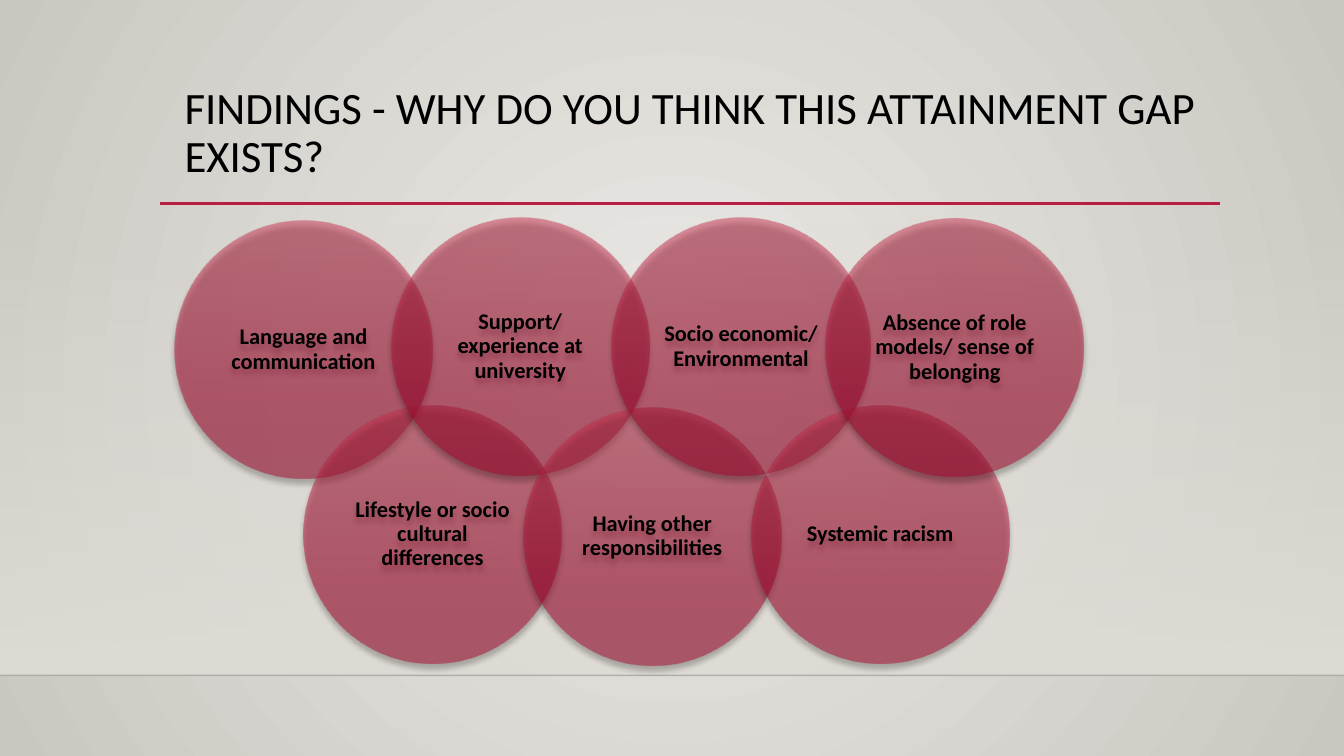
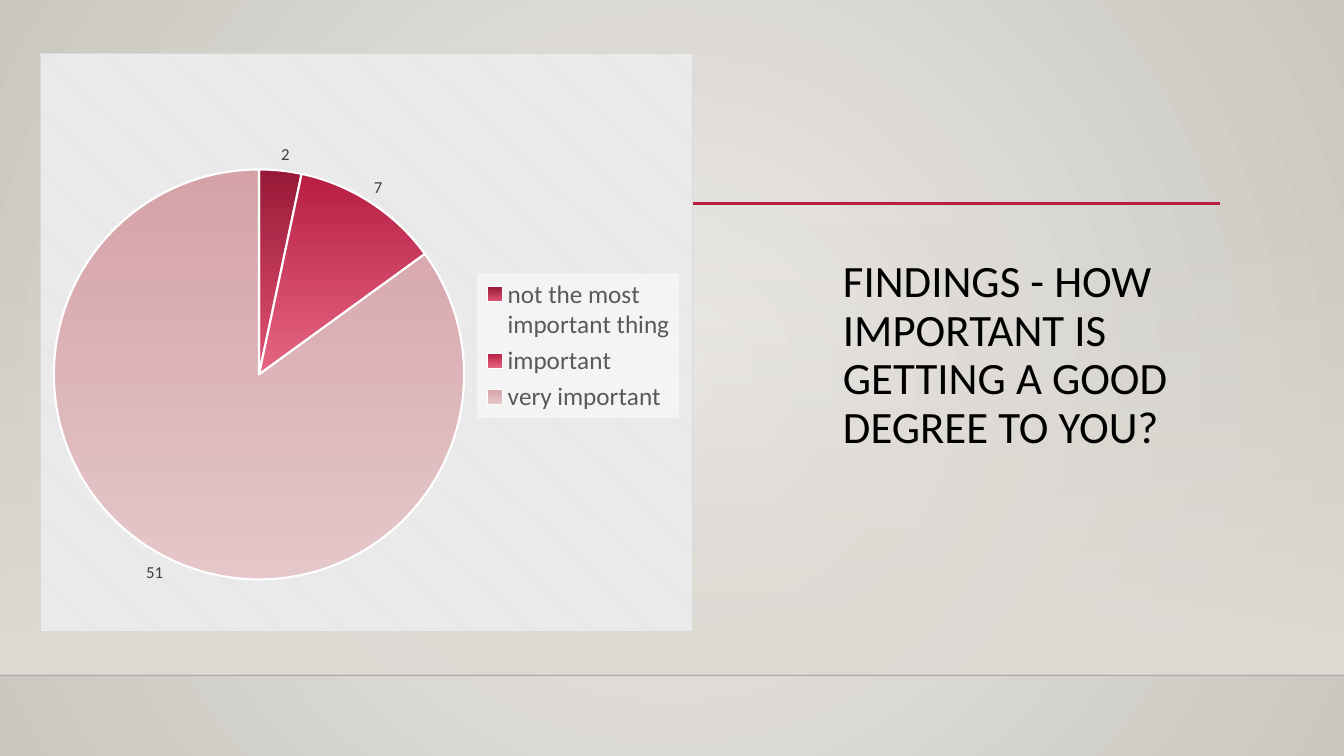
from dataclasses import dataclass

from lxml.etree import SubElement
from pptx import Presentation
from pptx.chart.data import CategoryChartData
from pptx.dml.color import RGBColor
from pptx.enum.chart import XL_CHART_TYPE as ChartType
from pptx.enum.chart import XL_LABEL_POSITION as LabelPosition
from pptx.enum.chart import XL_LEGEND_POSITION as LegendPosition
from pptx.enum.shapes import MSO_CONNECTOR as Connector
from pptx.enum.shapes import MSO_SHAPE as Shape
from pptx.enum.text import MSO_ANCHOR as Anchor
from pptx.enum.text import MSO_AUTO_SIZE as AutoSize
from pptx.enum.text import PP_ALIGN as Align
from pptx.oxml import parse_xml
from pptx.oxml.ns import nsdecls, qn
from pptx.util import Inches, Pt

SLIDE_WIDTH, SLIDE_HEIGHT = Inches(13.33), Inches(7.5)


@dataclass(frozen=True)
class Theme:
    font: str = "Calibri"
    ink: str = "000000"
    accent: str = "B71E42"
    floor_line: str = "000001"
    slice_edge: str = "FFFFFF"
    label_ink: str = "404040"
    legend_ink: str = "595959"
    # Gradient stops: position in percent, colour, opacity in percent
    backdrop: tuple = ((0, "ECEAE7", 100), (100, "CAC7C1", 100))
    band: tuple = ((0, "DFDBD5", 0), (100, "DFDBD5", 100))
    bubble: tuple = ((0, "C7304C", 50), (69, "B3062F", 50), (100, "AA062C", 50))
    slices: tuple = (
        ((0, "981937", 100), (100, "E35375", 100)),
        ((0, "B71E42", 100), (100, "E66684", 100)),
        ((0, "D4A2A7", 100), (100, "E5C7CA", 100)),
    )
    title_size: int = 32
    bubble_size: int = 16
    legend_size: int = 18
    label_size: int = 12
    chart_size: int = 10


THEME = Theme()

BUBBLE_SHARE = 19.2  # diameter, percent of slide width
# Left and top in percent of the slide, then the theme found
FINDINGS = (
    (12.98, 29.2, "Language and communication"),
    (22.58, 53.6, "Lifestyle or socio cultural differences"),
    (29.11, 28.8, "Support/ experience at university"),
    (38.93, 53.87, "Having other responsibilities"),
    (45.54, 28.8, "Socio economic/ Environmental"),
    (55.89, 53.6, "Systemic racism"),
    (61.44, 28.93, "Absence of role models/ sense of belonging"),
)
ANSWERS = {"not the most important thing": 2, "important": 7, "very important": 51}


def across(percent):
    return round(SLIDE_WIDTH * percent / 100)


def down(percent):
    return round(SLIDE_HEIGHT * percent / 100)


def area(left, top, width, height):
    """Turn shares of the slide into a left, top, width, height box."""
    return across(left), down(top), across(width), down(height)


def rgb(colour):
    return RGBColor.from_string(colour)


def style_font(font, size, colour, bold=False):
    font.name = THEME.font
    font.size = Pt(size)
    font.bold = bold
    font.color.rgb = rgb(colour)


def add_alpha(colour_element, opacity):
    SubElement(colour_element, qn("a:alpha")).set("val", str(opacity * 1000))


def paint_gradient(fill, stops, radial=False):
    """Fill from top to bottom, or from the centre outwards if radial."""
    fill.gradient()
    gradient = fill._xPr.find(qn("a:gradFill"))
    stop_list = gradient.find(qn("a:gsLst"))
    for default_stop in list(stop_list):
        stop_list.remove(default_stop)
    for position, colour, opacity in stops:
        stop = SubElement(stop_list, qn("a:gs"))
        stop.set("pos", str(position * 1000))
        colour_element = SubElement(stop, qn("a:srgbClr"))
        colour_element.set("val", colour)
        if opacity < 100:
            add_alpha(colour_element, opacity)
    if radial:
        gradient.replace(gradient.find(qn("a:lin")), parse_xml(
            f'<a:path {nsdecls("a")} path="circle">'
            '<a:fillToRect l="50000" t="50000" r="50000" b="50000"/></a:path>'))
    else:
        fill.gradient_angle = 270


def add_rule(slide, start, end, level, colour, weight, opacity=100):
    rule = slide.shapes.add_connector(
        Connector.STRAIGHT, across(start), down(level), across(end), down(level))
    rule.line.color.rgb = rgb(colour)
    rule.line.width = Pt(weight)
    if opacity < 100:
        add_alpha(next(rule.element.spPr.iter(qn("a:srgbClr"))), opacity)
    SubElement(rule.element.spPr, qn("a:effectLst"))
    return rule


def decorate_layout(layout, slide):
    """Draw the shared scenery on a slide and move it behind the layout's parts."""
    paint_gradient(layout.background.fill, THEME.backdrop, radial=True)
    band = slide.shapes.add_shape(Shape.RECTANGLE, *area(0, 29.47, 100, 59.87))
    band.shadow.inherit = False
    band.line.fill.background()
    paint_gradient(band.fill, THEME.band)
    floor = add_rule(slide, 0, 100, 89.33, THEME.floor_line, 1, opacity=20)
    title_rule = add_rule(slide, 11.93, 90.77, 26.93, THEME.accent, 2.5)
    for index, part in enumerate((band, floor, title_rule)):
        part.element.xpath(".//p:cNvPr")[0].set("id", str(100 + index))
        layout.shapes.element.insert(2 + index, part.element)


def set_title(slide, text, box):
    title = slide.shapes.title
    title.left, title.top, title.width, title.height = box
    frame = title.text_frame
    frame.word_wrap = True
    frame.auto_size = AutoSize.NONE
    frame.vertical_anchor = Anchor.TOP
    paragraph = frame.paragraphs[0]
    paragraph.alignment = Align.LEFT
    paragraph.line_spacing = 0.9
    run = paragraph.add_run()
    run.text = text
    style_font(run.font, THEME.title_size, THEME.ink)


def add_bubble(slide, left, top, text):
    diameter = across(BUBBLE_SHARE)
    bubble = slide.shapes.add_shape(
        Shape.OVAL, across(left), down(top), diameter, diameter)
    bubble.line.fill.background()
    paint_gradient(bubble.fill, THEME.bubble)
    bubble.shadow.inherit = False
    bubble.element.spPr.find(qn("a:effectLst")).append(parse_xml(
        f'<a:outerShdw {nsdecls("a")} blurRad="{Pt(4)}" dist="{Pt(4)}" '
        'dir="5400000" rotWithShape="0"><a:srgbClr val="000000">'
        '<a:alpha val="48000"/></a:srgbClr></a:outerShdw>'))
    frame = bubble.text_frame
    frame.word_wrap = True
    frame.vertical_anchor = Anchor.MIDDLE
    frame.margin_left = frame.margin_right = Inches(0.07)
    frame.margin_top = frame.margin_bottom = Inches(0.07)
    paragraph = frame.paragraphs[0]
    paragraph.alignment = Align.CENTER
    paragraph.line_spacing = 0.9
    run = paragraph.add_run()
    run.text = text
    style_font(run.font, THEME.bubble_size, THEME.ink, bold=True)


def place_in_chart(part, index, x, y, w, h, inner=False):
    """Fix a chart part's place, in shares of the chart, as its child at index."""
    for automatic in part.findall(qn("c:layout")):
        part.remove(automatic)
    target = '<c:layoutTarget val="inner"/>' if inner else ""
    part.insert(index, parse_xml(
        f'<c:layout {nsdecls("c")}><c:manualLayout>{target}'
        '<c:xMode val="edge"/><c:yMode val="edge"/>'
        f'<c:x val="{x}"/><c:y val="{y}"/><c:w val="{w}"/><c:h val="{h}"/>'
        '</c:manualLayout></c:layout>'))


def style_legend(chart):
    chart.has_legend = True
    legend = chart.legend
    legend.position = LegendPosition.RIGHT
    legend.include_in_layout = False
    style_font(legend.font, THEME.legend_size, THEME.legend_ink)
    element = chart.element.find(f".//{qn('c:legend')}")
    place_in_chart(element, 1, 0.67, 0.38, 0.31, 0.25)
    element.find(qn("c:txPr")).addprevious(parse_xml(
        f'<c:spPr {nsdecls("c", "a")}><a:solidFill><a:srgbClr val="FFFFFF">'
        '<a:alpha val="50000"/></a:srgbClr></a:solidFill></c:spPr>'))


def style_chart_area(chart):
    chart.element.find(qn("c:chart")).addnext(parse_xml(
        f'<c:spPr {nsdecls("c", "a")}><a:pattFill prst="dkDnDiag">'
        '<a:fgClr><a:srgbClr val="FFFFFF"/></a:fgClr>'
        '<a:bgClr><a:srgbClr val="E6E6E6"/></a:bgClr></a:pattFill>'
        f'<a:ln w="{Pt(0.75)}"><a:solidFill><a:srgbClr val="D9D9D9"/>'
        '</a:solidFill></a:ln></c:spPr>'))


def add_pie(slide, answers, box):
    data = CategoryChartData()
    data.categories = list(answers)
    data.add_series("Series 1", list(answers.values()))
    chart = slide.shapes.add_chart(ChartType.PIE, *box, data).chart
    chart.has_title = False
    style_font(chart.font, THEME.chart_size, THEME.ink)
    style_chart_area(chart)
    style_legend(chart)
    place_in_chart(chart.element.find(f".//{qn('c:plotArea')}"), 0,
                   0.02, 0.2, 0.63, 0.71, inner=True)

    plot = chart.plots[0]
    plot.vary_by_categories = True
    for index, stops in enumerate(THEME.slices):
        slice_format = plot.series[0].points[index].format
        paint_gradient(slice_format.fill, stops)
        slice_format.line.color.rgb = rgb(THEME.slice_edge)
        slice_format.line.width = Pt(1.5)
    plot.has_data_labels = True
    labels = plot.data_labels
    labels.show_value = True
    labels.show_percentage = False
    labels.position = LabelPosition.OUTSIDE_END
    style_font(labels.font, THEME.label_size, THEME.label_ink)


def main():
    deck = Presentation()
    deck.slide_width, deck.slide_height = SLIDE_WIDTH, SLIDE_HEIGHT
    layout = deck.slide_layouts.get_by_name("Title Only")

    reasons = deck.slides.add_slide(layout)
    decorate_layout(layout, reasons)
    set_title(reasons, "FINDINGS - WHY DO YOU THINK THIS ATTAINMENT GAP EXISTS?",
              area(12.98, 10.67, 78.77, 15.33))
    for left, top, text in FINDINGS:
        add_bubble(reasons, left, top, text)

    importance = deck.slides.add_slide(layout)
    set_title(importance, "FINDINGS - HOW IMPORTANT IS GETTING A GOOD DEGREE TO YOU?",
              area(61.97, 33.6, 25.88, 54.67))
    add_pie(importance, ANSWERS, area(3, 7.07, 48.54, 76.53))

    deck.save("out.pptx")


if __name__ == "__main__":
    main()
